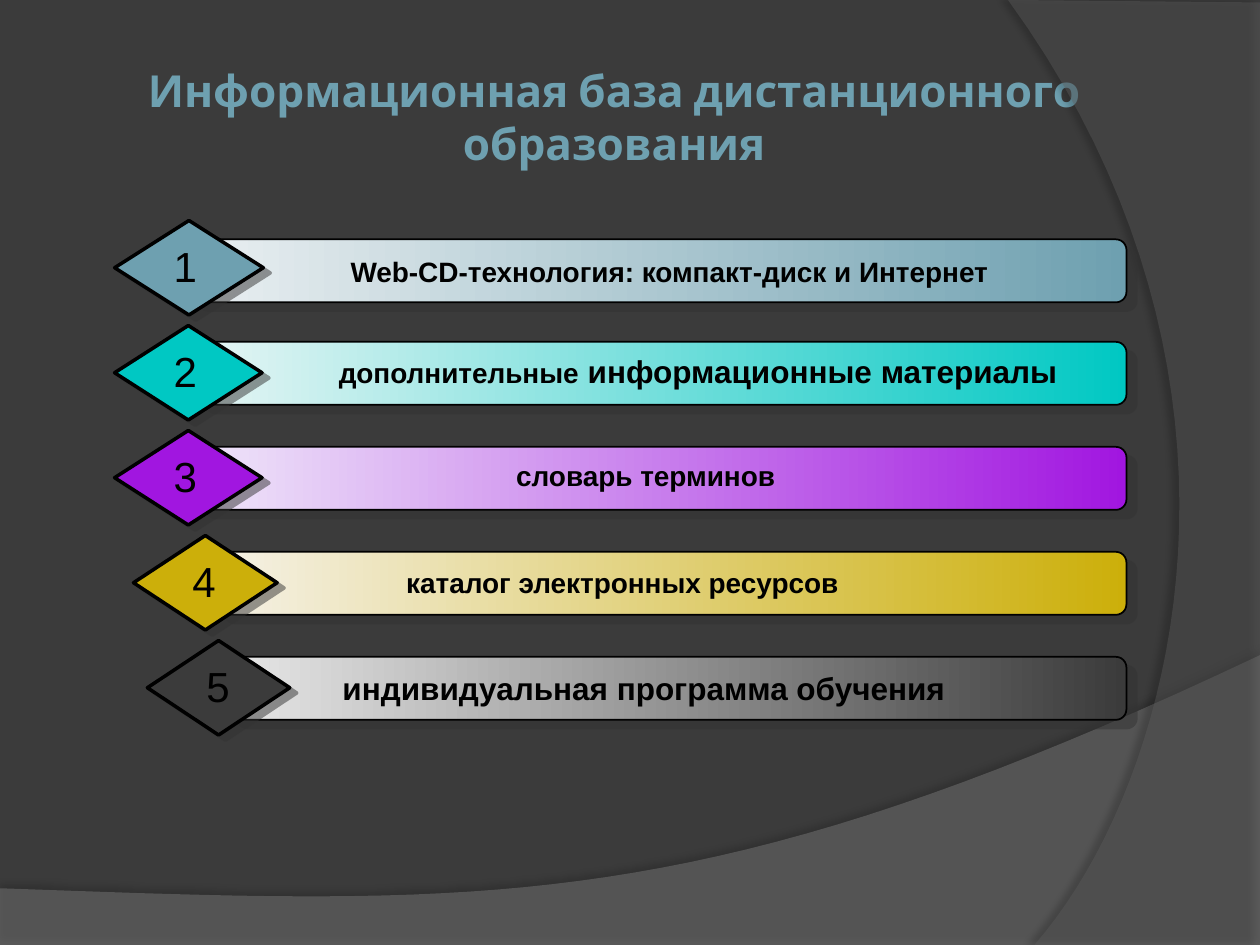
import pptx
import pptx.util
import pptx.dml.color
import pptx.enum.shapes
import pptx.enum.text
import pptx.oxml
import pptx.oxml.ns
from lxml import etree

INK = {
    "back": "3B3B3B", "title": "6EA0B0", "text": "000000", "shade": "333333",
    "hill": "7F7F7F", "arc": "5E5E5E",
}
KIND = pptx.enum.shapes.MSO_SHAPE
ALIGN = pptx.enum.text.PP_ALIGN
FIT = pptx.enum.text.MSO_AUTO_SIZE
MID = pptx.enum.text.MSO_ANCHOR.MIDDLE
COLS, ROWS = 10, 7.5
EDGE, TOP, STEP, TALL = 8.94, 1.75, 5 / 6, 0.75
ITEMS = [
    {"ink": ("EAEFF1", "6EA0B0"), "left": 0.91, "gem": 1.18, "bar": (0.58, 0.15),
     "label": (1.04, 0.19, 6.72, 0.42),
     "runs": [(" ", 18), ("Web-CD-технология: компакт-диск и Интернет ", 16)]},
    {"ink": ("E6F5F4", "00C8C3"), "left": 0.91, "gem": 1.17, "bar": (0.64, 0.13),
     "label": (1.3, 0.16, 6.73, 0.4),
     "runs": [("дополнительные", 16), (" информационные материалы ", 18)]},
    {"ink": ("EFE6F9", "A116E0"), "left": 0.91, "gem": 1.17, "bar": (0.64, 0.13),
     "label": (1.3, 0.17, 5.83, 0.37), "runs": [("словарь терминов", 16)]},
    {"ink": ("F5F1E6", "CCAF0A"), "left": 1.06, "gem": 1.14, "bar": (0.64, 0.13),
     "label": (1.02, 0.19, 5.72, 0.37),
     "runs": [("каталог электронных ресурсов", 16)]},
    {"ink": ("E7E7E7", "3B3B3B"), "left": 1.17, "gem": 1.13, "bar": (0.63, 0.13),
     "label": (1.12, 0.18, 5.64, 0.4),
     "runs": [("индивидуальная программа обучения", 18)]},
]


def grid(*cells):
    """Turn grid columns and rows into lengths."""
    return [pptx.util.Inches(cell) for cell in cells]


def rgb(code):
    """Make a colour from a hex string."""
    return pptx.dml.color.RGBColor.from_string(code)


def shadow(shape, code, alpha, blur, dist, angle):
    """Give a shape an outer shadow."""
    shape.shadow.inherit = False
    tag = pptx.oxml.ns.qn
    root = shape.element.spPr.find(tag("a:effectLst"))
    node = etree.SubElement(
        root, tag("a:outerShdw"), blurRad=str(pptx.util.Pt(blur)),
        dist=str(pptx.util.Pt(dist)), dir=str(angle * 60000),
        algn="ctr", rotWithShape="0")
    tint = etree.SubElement(node, tag("a:srgbClr"), val=code)
    etree.SubElement(tint, tag("a:alpha"), val=str(alpha * 1000))


def curve(a, b, c, d, count=40):
    """List points along a cubic curve after its start."""
    points = []
    for i in range(1, count + 1):
        t = i / count
        u = 1 - t
        points.append(tuple(
            u ** 3 * p + 3 * u * u * t * q + 3 * u * t * t * r + t ** 3 * s
            for p, q, r, s in zip(a, b, c, d)))
    return points


def wave(slide, points, code, alpha, shade):
    """Draw one translucent backdrop outline."""
    spots = [tuple(grid(*point)) for point in points]
    pen = slide.shapes.build_freeform(*spots[0])
    pen.add_line_segments(spots[1:])
    shape = pen.convert_to_shape()
    shape.fill.solid()
    shape.fill.fore_color.rgb = rgb(code)
    tint = shape.element.spPr.find(".//" + pptx.oxml.ns.qn("a:srgbClr"))
    etree.SubElement(tint, pptx.oxml.ns.qn("a:alpha"), val=str(alpha * 1000))
    shape.line.fill.background()
    shadow(shape, *shade)


def backdrop(slide):
    """Set the ground colour and the two curved areas."""
    fill = slide.background.fill
    fill.solid()
    fill.fore_color.rgb = rgb(INK["back"])
    hill = [(0, 7.05), (0, ROWS), (COLS, ROWS), (COLS, 5.2)]
    hill += curve(hill[-1], (5.59, 7.29), (3.91, 7.19), hill[0])
    wave(slide, hill, INK["hill"], 45, ("000000", 35, 4, 3.5, 270))
    arc = [(COLS, 0.02), (COLS, ROWS), (8.21, ROWS)]
    arc += curve(arc[-1], (9.35, 6.19), (10.18, 3), (8, 0))
    wave(slide, arc, INK["arc"], 40, ("000000", 45, 4, 4, 180))


def heading(slide, box):
    """Fill and format the title placeholder."""
    title = slide.shapes.title
    title.left, title.top, title.width, title.height = grid(*box)
    frame = title.text_frame
    frame.text = "Информационная база дистанционного образования"
    frame.auto_size = FIT.NONE
    frame.word_wrap = True
    frame.vertical_anchor = MID
    inset = pptx.util.Inches(0.05)
    frame.margin_left = frame.margin_right = inset
    frame.margin_top = frame.margin_bottom = inset
    line = frame.paragraphs[0]
    line.alignment = ALIGN.CENTER
    line.font.name, line.font.bold = "Cabin", True
    line.font.size = pptx.util.Pt(25.2)
    line.font.color.rgb = rgb(INK["title"])


def block(group, kind, box, width, dist, angle):
    """Add an outlined shape with a hard shadow."""
    shape = group.shapes.add_shape(kind, *grid(*box))
    shape.line.color.rgb = rgb(INK["text"])
    shape.line.width = pptx.util.Pt(width)
    shadow(shape, INK["shade"], 50, 0, dist, angle)
    return shape


def label(group, box, runs, bold, wrap):
    """Add a centred text box."""
    frame = group.shapes.add_textbox(*grid(*box)).text_frame
    frame.word_wrap = wrap
    frame.auto_size = FIT.SHAPE_TO_FIT_TEXT
    line = frame.paragraphs[0]
    line.alignment = ALIGN.CENTER
    for text, size in runs:
        run = line.add_run()
        run.text = text
        run.font.size = pptx.util.Pt(size)
    line.font.name, line.font.bold = "Arial", bold
    line.font.color.rgb = rgb(INK["text"])


def entry(slide, box, num, item):
    """Place one numbered bar in its row box."""
    x, y, w, h = box
    group = slide.shapes.add_group_shape()
    dx, dy = item["bar"]
    bar = block(group, KIND.ROUNDED_RECTANGLE,
                (x + dx, y + dy, w - dx, h * 2 / 3), 1, 7.8, 40)
    bar.fill.gradient()
    bar.fill.gradient_angle = 0
    for stop, code in zip(bar.fill.gradient_stops, item["ink"]):
        stop.color.rgb = rgb(code)
    gem = block(group, KIND.DIAMOND, (x, y, item["gem"], h), 2, 5, 37)
    gem.fill.solid()
    gem.fill.fore_color.rgb = rgb(item["ink"][1])
    dx, dy, wide, tall = item["label"]
    label(group, (x + dx, y + dy, wide, tall), item["runs"], True, True)
    label(group, (x + 0.26, y + 0.11, 0.6, 0.5), [(str(num), 24)], False, False)


def main():
    """Build and save the slide."""
    deck = pptx.Presentation()
    deck.slide_width, deck.slide_height = grid(COLS, ROWS)
    slide = deck.slides.add_slide(deck.slide_layouts[5])
    backdrop(slide)
    heading(slide, (0.5, 0.3, 8.75, 1.25))
    for i, item in enumerate(ITEMS):
        box = (item["left"], TOP + i * STEP, EDGE - item["left"], TALL)
        entry(slide, box, i + 1, item)
    deck.save("out.pptx")


if __name__ == "__main__":
    main()
